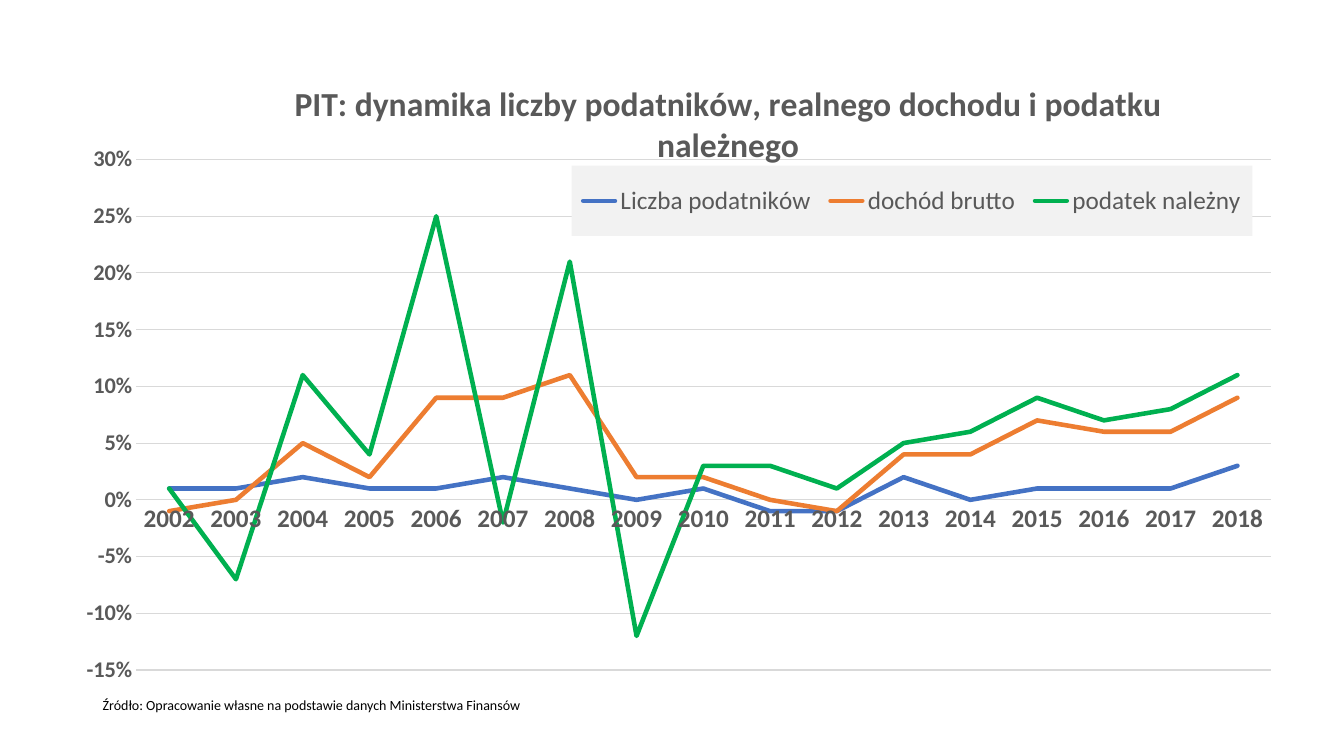
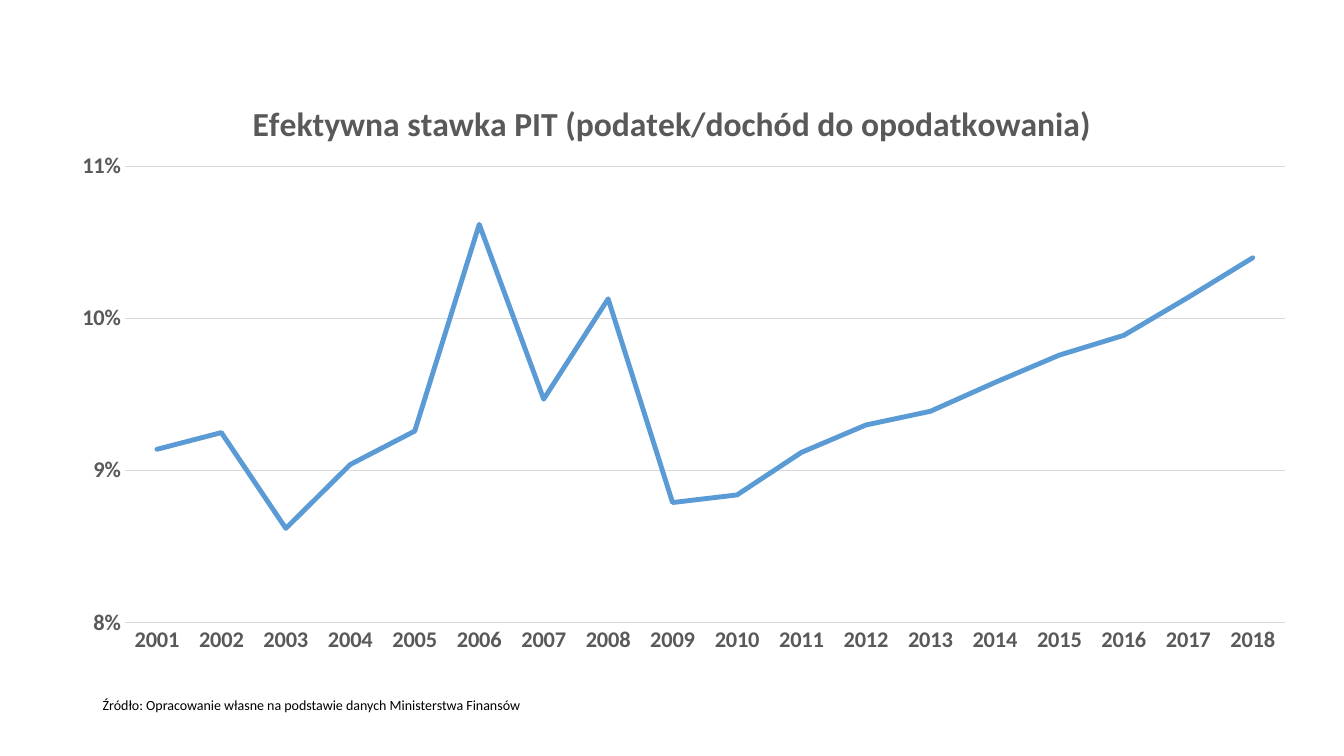
from dataclasses import dataclass

from lxml import etree
from pptx import Presentation
from pptx.chart.data import CategoryChartData
from pptx.dml.color import RGBColor
from pptx.enum import chart as ch
from pptx.oxml import ns
from pptx.util import Inches, Pt


@dataclass(frozen=True)
class Theme:
    font: str = "Calibri"
    black: str = "000000"
    label: str = "595959"
    grid: str = "D9D9D9"
    legend_fill: str = "F2F2F2"
    blue: str = "4472C4"
    orange: str = "ED7D31"
    green: str = "00B050"
    light_blue: str = "5B9BD5"
    title_size: int = 24
    legend_size: int = 18
    axis_size: int = 16
    source_size: int = 10
    grid_width: float = 0.75


THEME = Theme()
SOURCE = "Źródło: Opracowanie własne na podstawie danych Ministerstwa Finansów"

GROWTH = {
    "Liczba podatników": (
        0.01, 0.01, 0.02, 0.01, 0.01, 0.02, 0.01, 0, 0.01,
        -0.01, -0.01, 0.02, 0, 0.01, 0.01, 0.01, 0.03),
    "dochód brutto": (
        -0.01, 0, 0.05, 0.02, 0.09, 0.09, 0.11, 0.02, 0.02,
        0, -0.01, 0.04, 0.04, 0.07, 0.06, 0.06, 0.09),
    "podatek należny": (
        0.01, -0.07, 0.11, 0.04, 0.25, -0.02, 0.21, -0.12, 0.03,
        0.03, 0.01, 0.05, 0.06, 0.09, 0.07, 0.08, 0.11),
}
RATE = {
    "Series 1": (
        0.0914, 0.0925, 0.0862, 0.0904, 0.0926, 0.1062, 0.0947, 0.1013, 0.0879,
        0.0884, 0.0912, 0.093, 0.0939, 0.0958, 0.0976, 0.0989, 0.1014, 0.104),
}


def format_font(font, size, color=THEME.label, bold=False):
    font.name = THEME.font
    font.size = Pt(size)
    font.bold = bold
    font.color.rgb = RGBColor.from_string(color)


def format_line(line, color, width):
    line.color.rgb = RGBColor.from_string(color)
    line.width = Pt(width)


def add_text(slide, text, box, **font):
    tf = slide.shapes.add_textbox(*map(Inches, box)).text_frame
    tf.word_wrap = True
    r = tf.paragraphs[0].add_run()
    r.text = text
    format_font(r.font, **font)


def place(element, *percents, inner=False):
    """Position a chart part by x, y and optional w, h in percent of the chart."""
    for old in element.findall(ns.qn("c:layout")):
        element.remove(old)
    layout = etree.Element(ns.qn("c:layout"))
    manual = etree.SubElement(layout, ns.qn("c:manualLayout"))
    settings = [("layoutTarget", "inner")] if inner else []
    settings += [("xMode", "edge"), ("yMode", "edge")]
    settings += [(tag, round(val / 100, 4)) for tag, val in zip("xywh", percents)]
    for tag, val in settings:
        etree.SubElement(manual, ns.qn(f"c:{tag}")).set("val", str(val))
    overlay = element.find(ns.qn("c:overlay"))
    if overlay is None:
        element.insert(0, layout)
    else:
        overlay.addprevious(layout)


def add_title(chart, text, position=None):
    tf = chart.chart_title.text_frame
    tf.text = text
    format_font(tf.paragraphs[0].runs[0].font, THEME.title_size, bold=True)
    if position:
        place(chart.chart_title._element, *position)


def add_legend(chart, position):
    chart.has_legend = True
    legend = chart.legend
    legend.position = ch.XL_LEGEND_POSITION.BOTTOM
    legend.include_in_layout = False
    format_font(legend.font, THEME.legend_size)
    place(legend._element, *position)
    sp_pr = etree.Element(ns.qn("c:spPr"))
    fill = etree.SubElement(sp_pr, ns.qn("a:solidFill"))
    etree.SubElement(fill, ns.qn("a:srgbClr")).set("val", THEME.legend_fill)
    legend._element.find(ns.qn("c:overlay")).addnext(sp_pr)


def format_axes(chart, low, high, step, category_size):
    category, value = chart.category_axis, chart.value_axis
    for axis, size in ((category, category_size), (value, THEME.axis_size)):
        axis.major_tick_mark = axis.minor_tick_mark = ch.XL_TICK_MARK.NONE
        format_font(axis.tick_labels.font, size, bold=True)
    format_line(category.format.line, THEME.grid, THEME.grid_width)
    value.format.line.fill.background()
    value.minimum_scale, value.maximum_scale, value.major_unit = low, high, step
    value.tick_labels.number_format = "0%"
    value.tick_labels.number_format_is_linked = False
    format_line(value.major_gridlines.format.line, THEME.grid, THEME.grid_width)


def add_line_chart(slide, box, first_year, series, colors, width, plot_area):
    data = CategoryChartData(number_format="0%")
    count = len(next(iter(series.values())))
    data.categories = [str(first_year + i) for i in range(count)]
    for name, values in series.items():
        data.add_series(name, values)
    chart = slide.shapes.add_chart(
        ch.XL_CHART_TYPE.LINE, *map(Inches, box), data).chart
    format_font(chart.font, THEME.source_size, THEME.black)
    chart.has_legend = False
    plot = chart.plots[0]
    plot.vary_by_categories = False
    for s, color in zip(plot.series, colors):
        s.smooth = False
        s.marker.style = ch.XL_MARKER_STYLE.NONE
        format_line(s.format.line, color, width)
        ln = s._element.find(f"{ns.qn('c:spPr')}/{ns.qn('a:ln')}")
        ln.set("cap", "rnd")
        etree.SubElement(ln, ns.qn("a:round"))
    place(chart._chartSpace.chart.plotArea, *plot_area, inner=True)
    return chart


def add_slide(prs):
    slide = prs.slides.add_slide(prs.slide_layouts[6])
    add_text(slide, SOURCE, (0.92, 6.86, 9.9, 0.27),
             size=THEME.source_size, color=THEME.black)
    return slide


def add_growth_slide(prs):
    chart = add_line_chart(
        add_slide(prs), (0.59, 0.74, 12.21, 6.11), 2002, GROWTH,
        (THEME.blue, THEME.orange, THEME.green), 3.25, (6.2, 13.8, 92.2, 82.9))
    add_title(chart, "PIT: dynamika liczby podatników, realnego dochodu "
                     "i podatku należnego", (18.6, -0.8))
    add_legend(chart, (41.6, 14.8, 55.3, 11.4))
    format_axes(chart, -0.15, 0.3, 0.05, category_size=18)


def add_rate_slide(prs):
    chart = add_line_chart(
        add_slide(prs), (0.58, 0.77, 12.17, 6.09), 2001, RATE,
        (THEME.light_blue,), 3.5, (5.4, 14.5, 94.6, 74.3))
    add_title(chart, "Efektywna stawka PIT (podatek/dochód do opodatkowania)")
    format_axes(chart, 0.08, 0.11, 0.01, category_size=16)


def main():
    prs = Presentation()
    prs.slide_width, prs.slide_height = Inches(13.33), Inches(7.5)
    add_growth_slide(prs)
    add_rate_slide(prs)
    prs.save("out.pptx")


if __name__ == "__main__":
    main()
